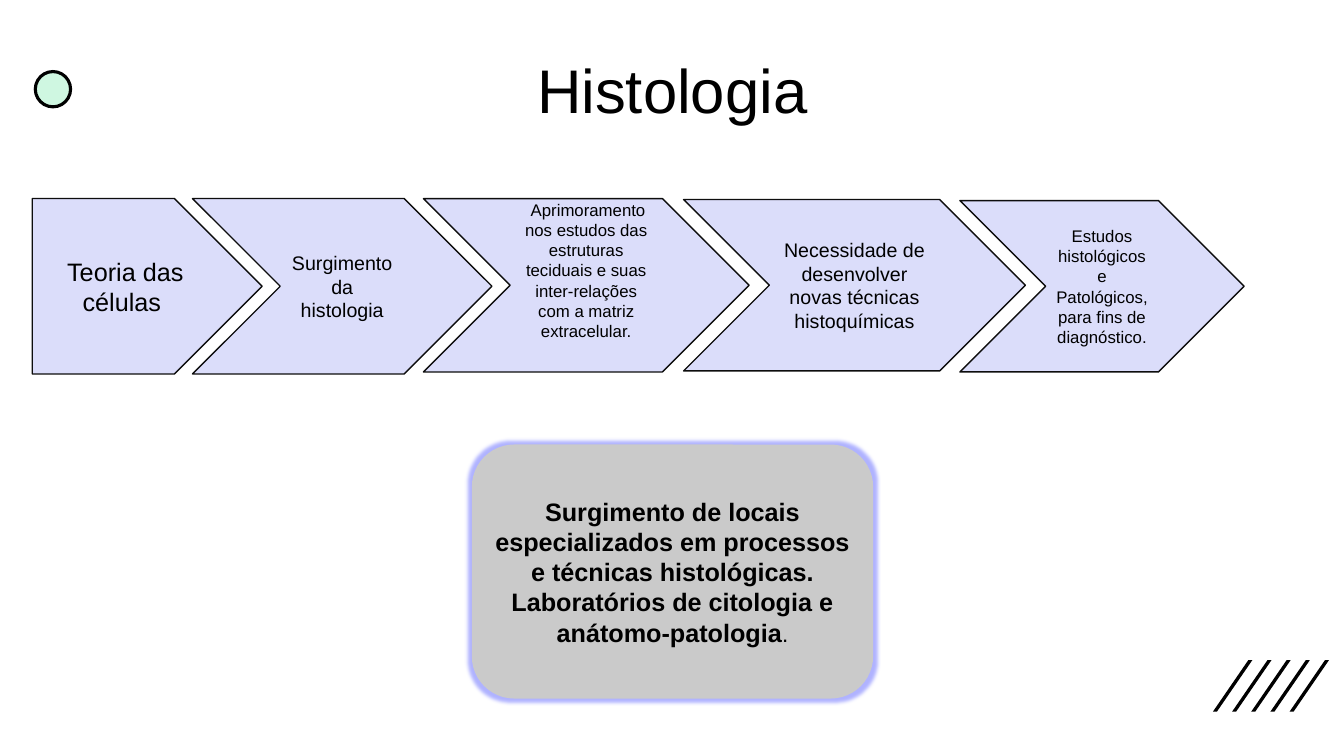
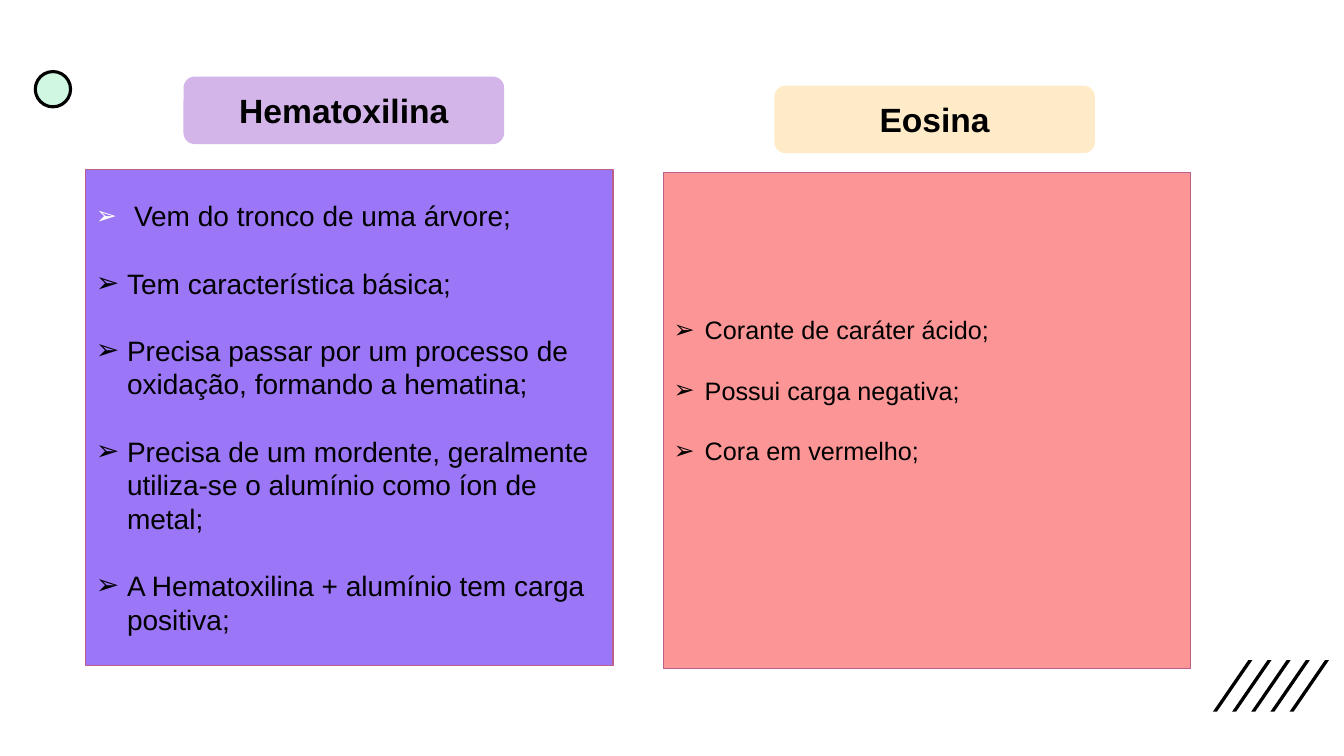
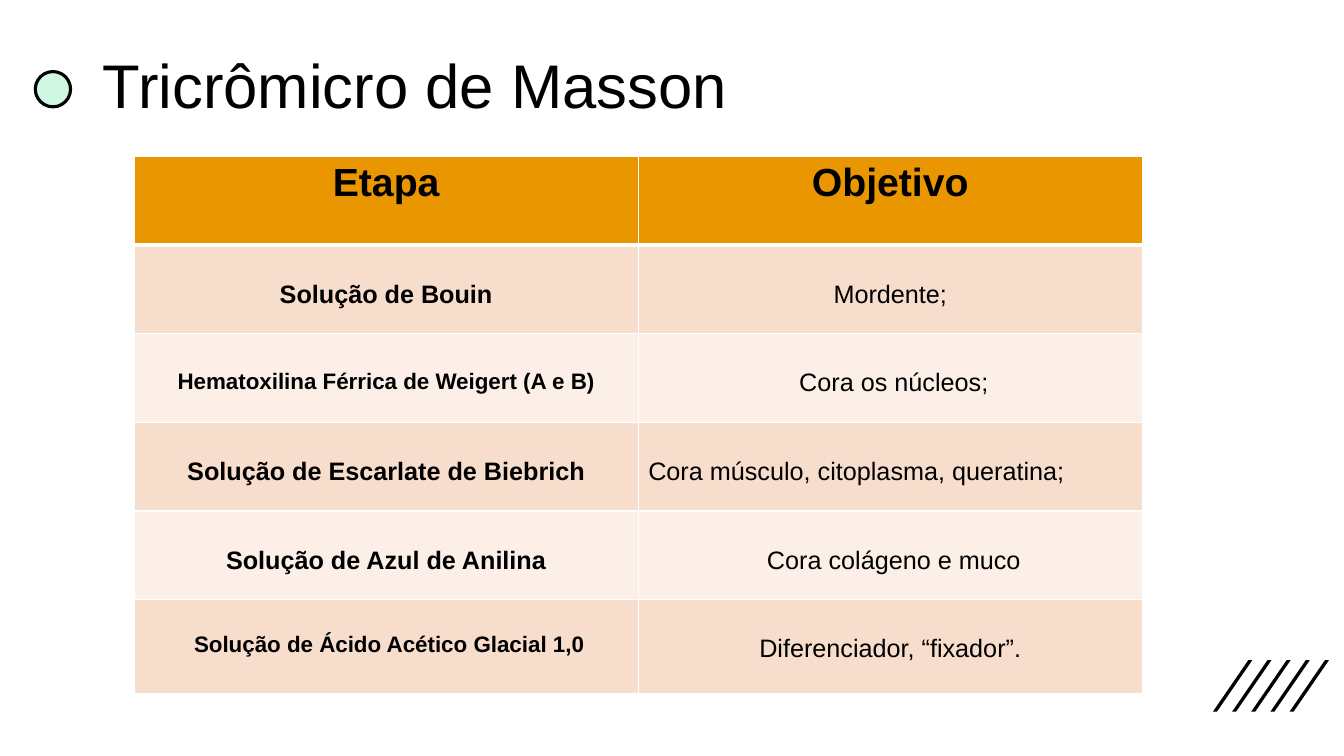
from dataclasses import dataclass
from typing import Any, NamedTuple

from lxml import etree
from pptx import Presentation
from pptx.dml.color import RGBColor
from pptx.enum import shapes, text
from pptx.oxml import ns
from pptx import util as u

PX = 9144
CENTER, LEFT = text.PP_ALIGN.CENTER, text.PP_ALIGN.LEFT
GEOMETRY = shapes.MSO_SHAPE
INSET = 5


@dataclass(frozen=True)
class Theme:
    font: str = "Arial"
    ink: str = "000000"
    paper: str = "FFFFFF"
    dot: str = "CFF7E1"
    step: str = "DBDDFA"
    step_edge: str = "0D0D0D"
    summary: str = "CACACA"
    glow: str = "B0B3FF"
    panel_edge: str = "BD5F8C"
    header: str = "EA9600"
    bands: tuple[str, str] = ("F7DDCC", "FBEFE7")
    title: int = 44
    table_head: int = 28
    heading: int = 24
    large: int = 20
    body: int = 18
    small: int = 16
    compact: int = 14
    tiny: int = 12
    leading: float = 1.2


THEME = Theme()


class Box(NamedTuple):
    left: int
    top: int
    width: int
    height: int

    def emu(self) -> list[int]:
        return [side * PX for side in self]


class Span(NamedTuple):
    words: str
    size: int = THEME.body
    bold: bool = False
    color: str = THEME.ink


class Step(NamedTuple):
    box: Box
    paragraphs: list[str]
    size: int
    geometry: Any = GEOMETRY.CHEVRON
    bottom: int = INSET


class Panel(NamedTuple):
    name: str
    heading_box: Box
    heading_fill: str
    list_box: Box
    list_fill: str
    items: list[list[Span]]
    bottom: int = INSET


class Entry(NamedTuple):
    words: str
    size: int = THEME.body
    align: Any = CENTER
    top: int = 35


STEPS = [
    Step(Box(32, 197, 228, 174), ["Teoria das células "], THEME.body, GEOMETRY.PENTAGON),
    Step(Box(191, 197, 297, 174), ["Surgimento ", "da histologia"], THEME.compact),
    Step(Box(420, 197, 323, 172),
         [" Aprimoramento nos estudos das estruturas teciduais e suas "
          "inter-relações com a matriz extracelular."], THEME.tiny, bottom=35),
    Step(Box(678, 198, 339, 170),
         ["Necessidade de desenvolver novas técnicas histoquímicas"], THEME.compact),
    Step(Box(952, 199, 282, 170),
         ["Estudos histológicos e Patológicos, para fins de diagnóstico."], THEME.tiny),
]

SUMMARY = [
    Span("Surgimento de locais especializados em processos e técnicas histológicas. "
         "Laboratórios de citologia e anátomo-patologia", bold=True),
    Span(".", THEME.small),
]

PANELS = [
    Panel("Hematoxilina", Box(182, 76, 318, 67), "D3B5E9", Box(85, 168, 523, 492), "9B76F6", [
        [Span(" ", color=THEME.paper), Span("Vem do tronco de uma árvore;", THEME.large)],
        *[[Span(words, THEME.large)] for words in (
            "Tem característica básica;",
            "Precisa passar por um processo de oxidação, formando a hematina;",
            "Precisa de um mordente, geralmente utiliza-se o alumínio como íon de metal;",
            "A Hematoxilina + alumínio tem carga positiva;",
        )],
    ]),
    Panel("Eosina", Box(768, 85, 318, 67), "FFEBC8", Box(658, 171, 523, 492), "FC9696", [
        [Span(words)] for words in (
            "Corante de caráter ácido;", "Possui carga negativa;", "Cora em vermelho;")
    ], bottom=65),
]

STAGES = [
    (Entry("Solução de Bouin"), Entry("Mordente;")),
    (Entry("Hematoxilina Férrica de Weigert (A e B)", THEME.small), Entry(" Cora os núcleos;")),
    (Entry("Solução de Escarlate de Biebrich"),
     Entry("Cora músculo, citoplasma, queratina;", align=LEFT)),
    (Entry("Solução de Azul de Anilina"), Entry(" Cora colágeno e muco")),
    (Entry(" Solução de Ácido Acético Glacial 1,0", THEME.small, top=32),
     Entry("Diferenciador, “fixador”.")),
]


def apply(target: Any, values: dict[str, Any]) -> None:
    for name, value in values.items():
        setattr(target, name, value)


def paint(fill: Any, color: str) -> None:
    fill.solid()
    fill.fore_color.rgb = RGBColor.from_string(color)


def write(frame: Any, paragraphs: list[list[Span]], align: Any = CENTER,
          **spacing: Any) -> None:
    for index, spans in enumerate(paragraphs):
        paragraph = frame.paragraphs[0] if index == 0 else frame.add_paragraph()
        apply(paragraph, {"alignment": align, "space_before": u.Pt(0), **spacing})
        for span in spans:
            run = paragraph.add_run()
            run.text = span.words
            apply(run.font, {"name": THEME.font, "size": u.Pt(span.size), "bold": span.bold})
            run.font.color.rgb = RGBColor.from_string(span.color)


def settle(frame: Any, bottom: int = INSET) -> None:
    apply(frame, {"word_wrap": True, "auto_size": text.MSO_AUTO_SIZE.NONE,
                  "vertical_anchor": text.MSO_ANCHOR.MIDDLE, "margin_bottom": bottom * PX})


def place(holder: Any, box: Box) -> None:
    apply(holder, dict(zip(box._fields, box.emu())))


def style(shape: Any, fill: str, edge: str | None = None, weight: float = 1) -> None:
    shape.shadow.inherit = False
    paint(shape.fill, fill)
    if edge is None:
        shape.line.fill.background()
    else:
        paint(shape.line.fill, edge)
        shape.line.width = u.Pt(weight)


def add_block(slide: Any, geometry: Any, box: Box, fill: str, paragraphs: list[list[Span]],
              edge: str | None = None, bottom: int = INSET) -> Any:
    block = slide.shapes.add_shape(geometry, *box.emu())
    style(block, fill, edge)
    settle(block.text_frame, bottom)
    write(block.text_frame, paragraphs)
    return block


def add_glow(shape: Any, color: str, radius: int) -> None:
    effects = shape.element.spPr.find(ns.qn("a:effectLst"))
    glow = etree.SubElement(effects, ns.qn("a:glow"), rad=str(u.Pt(radius)))
    etree.SubElement(glow, ns.qn("a:srgbClr"), val=color)


def set_title(slide: Any, words: str, box: Box, align: Any) -> None:
    title = slide.shapes.title
    place(title, box)
    settle(title.text_frame)
    write(title.text_frame, [[Span(words, THEME.title)]], align, line_spacing=0.9)


def set_bullet(paragraph: Any, symbol: str, indent: int) -> None:
    properties = paragraph._p.get_or_add_pPr()
    properties.set("marL", str(indent * PX))
    properties.set("indent", str(-indent * PX))
    etree.SubElement(properties, ns.qn("a:buFont"), typeface=THEME.font)
    etree.SubElement(properties, ns.qn("a:buChar"), char=symbol)


def set_border(cell: Any, side: str, weight: int) -> None:
    properties = cell._tc.get_or_add_tcPr()
    border = etree.SubElement(properties, ns.qn(f"a:ln{side}"), w=str(u.Pt(weight)))
    fill = etree.SubElement(border, ns.qn("a:solidFill"))
    etree.SubElement(fill, ns.qn("a:srgbClr"), val=THEME.paper)


def decorate_master(slide: Any, master: Any) -> None:
    marks = []
    for index in range(5):
        left, top, bottom = 1203 + 19 * index, 655, 706
        outline = slide.shapes.build_freeform(left, bottom, scale=PX)
        outline.add_line_segments([(left + 35, top), (left + 39, top), (left + 4, bottom)])
        stripe = outline.convert_to_shape()
        style(stripe, THEME.ink)
        marks.append(stripe)
    dot = slide.shapes.add_shape(GEOMETRY.OVAL, *Box(35, 71, 35, 35).emu())
    style(dot, THEME.dot, THEME.ink, 2.25)
    for number, mark in enumerate([*marks, dot], start=100):
        mark.element.nvSpPr.cNvPr.id = number
        master.shapes.element.append(mark.element)


def build_history(slide: Any) -> None:
    set_title(slide, " Histologia ", Box(92, 20, 1150, 145), CENTER)
    summary = add_block(slide, GEOMETRY.ROUNDED_RECTANGLE, Box(468, 441, 398, 252),
                        THEME.summary, [SUMMARY])
    add_glow(summary, THEME.glow, 5)
    for step in STEPS:
        add_block(slide, step.geometry, step.box, THEME.step,
                  [[Span(words, step.size)] for words in step.paragraphs],
                  THEME.step_edge, step.bottom)


def build_dyes(slide: Any) -> None:
    title, *lists = slide.placeholders
    title.element.getparent().remove(title.element)
    for panel, holder in zip(PANELS, lists):
        place(holder, panel.list_box)
        paint(holder.fill, panel.list_fill)
        paint(holder.line.fill, THEME.panel_edge)
        holder.line.width = u.Pt(1)
        frame = holder.text_frame
        settle(frame, panel.bottom)
        write(frame, panel.items, LEFT)
        for index, paragraph in enumerate(frame.paragraphs):
            if index:
                paragraph.space_before = u.Pt(panel.items[index][-1].size * THEME.leading)
            set_bullet(paragraph, "➢", 31)
        add_block(slide, GEOMETRY.ROUNDED_RECTANGLE, panel.heading_box, panel.heading_fill,
                  [[Span(panel.name, THEME.heading, True)]])


def build_stain(slide: Any) -> None:
    set_title(slide, "Tricrômicro de Masson", Box(92, 31, 1150, 113), LEFT)
    header = tuple(Entry(words, THEME.table_head, top=INSET) for words in ("Etapa", "Objetivo"))
    rows = [header, *STAGES]
    heights = [88] * len(STAGES) + [93]
    box = Box(133, 155, 1000, sum(heights))
    table = slide.shapes.add_table(len(rows), len(header), *box.emu()).table
    table.horz_banding = False
    for row, (entries, height) in enumerate(zip(rows, heights)):
        table.rows[row].height = height * PX
        for column, entry in enumerate(entries):
            cell = table.cell(row, column)
            cell.margin_top = entry.top * PX
            for side in "LRTB":
                set_border(cell, side, 3 if (row, side) in ((0, "B"), (1, "T")) else 1)
            paint(cell.fill, THEME.bands[(row - 1) % 2] if row else THEME.header)
            bold = row == 0 or column == 0
            write(cell.text_frame, [[Span(entry.words, entry.size, bold)]], entry.align)


def main() -> None:
    deck = Presentation()
    apply(deck, {"slide_width": u.Inches(13.33), "slide_height": u.Inches(7.5)})
    pages = [(5, build_history), (3, build_dyes), (5, build_stain)]
    for number, (layout, build) in enumerate(pages):
        slide = deck.slides.add_slide(deck.slide_layouts[layout])
        if number == 0:
            decorate_master(slide, deck.slide_master)
        build(slide)
    deck.save("out.pptx")


if __name__ == "__main__":
    main()
